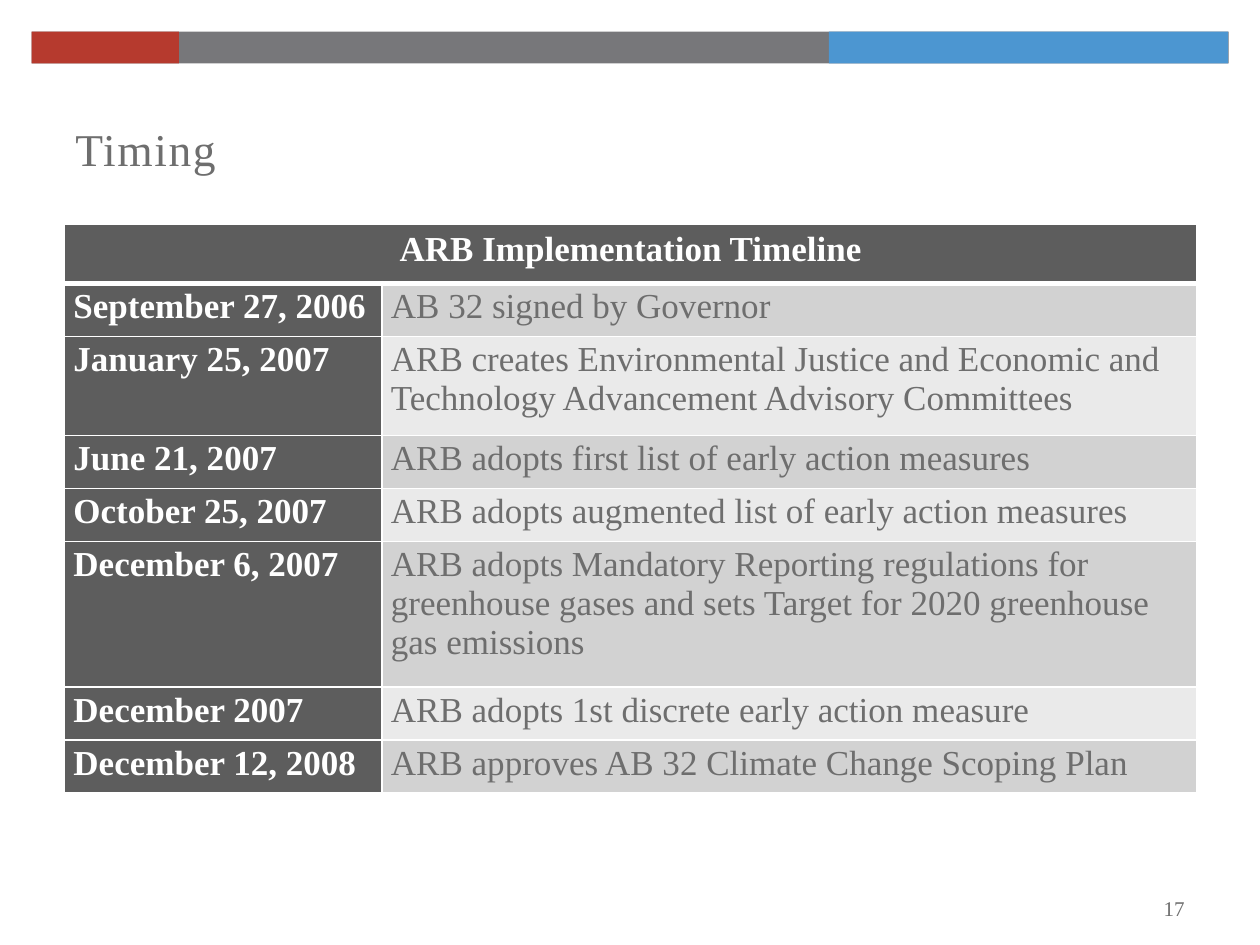
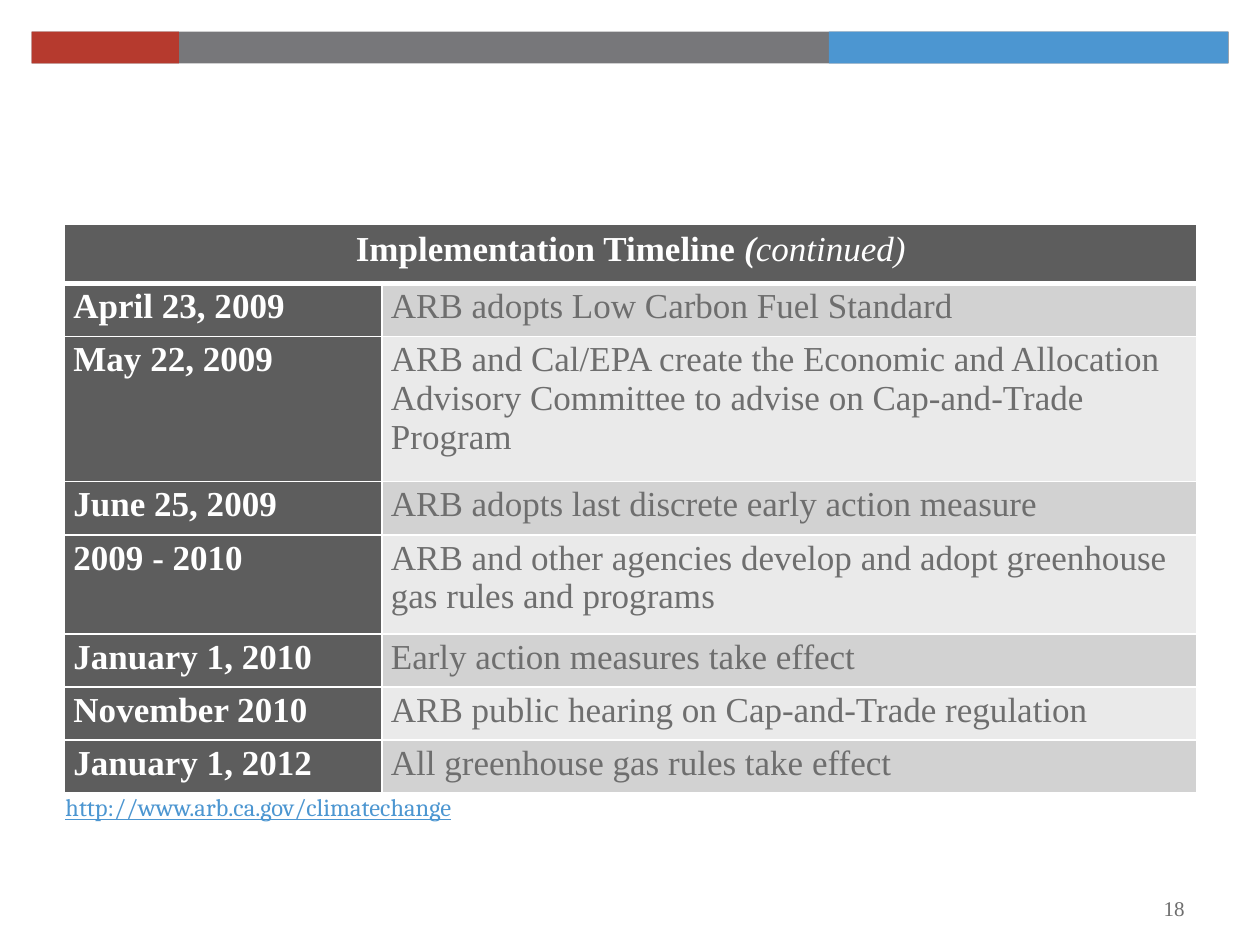
from lxml import etree
from pptx import Presentation
from pptx.dml.color import RGBColor
from pptx.enum.shapes import MSO_SHAPE
from pptx.enum.text import MSO_ANCHOR, MSO_AUTO_SIZE, PP_ALIGN
from pptx.oxml.ns import qn
from pptx.util import Cm, Pt

RECT = MSO_SHAPE.RECTANGLE
TOP = MSO_ANCHOR.TOP
NO_FIT = MSO_AUTO_SIZE.NONE
LEFT, CENTER, RIGHT = PP_ALIGN.LEFT, PP_ALIGN.CENTER, PP_ALIGN.RIGHT
TITLE_ONLY, BLANK = 5, 6

COLORS = {
    "text": "6E6E6E",
    "white": "FFFFFF",
    "gray": "77777A",
    "blue": "4C96D1",
    "red": "B63A2E",
    "head": "5D5D5D",
    "odd": "D2D2D2",
    "even": "EAEAEA",
}
SERIF = "Times New Roman"
TITLE = {"name": SERIF, "size": Pt(26), "bold": False}
NUMBER = {"name": SERIF, "size": Pt(12)}
LINK = {"name": "Cambria", "size": Pt(14), "underline": True}
BODY = {"name": SERIF, "size": Pt(20), "bold": False}
STRONG = {**BODY, "bold": True}
SLANTED = {**BODY, "italic": True}

BANDS = [("gray", 0.64, 24.13), ("blue", 16.71, 8.05), ("red", 0.64, 2.97)]
COLUMNS = [6.4, 16.43]
HEAD_HEIGHT, ROW_HEIGHT, EXTRA_LINE = 1.19, 1.07, 0.93

FIRST_HEAD = [("ARB Implementation Timeline", STRONG)]
FIRST_ROWS = [
    ("September 27, 2006", "AB 32 signed by Governor", 1),
    ("January 25, 2007", "ARB creates Environmental Justice and Economic and "
     "Technology Advancement Advisory Committees", 2),
    ("June 21, 2007", "ARB adopts first list of early action measures", 1),
    ("October 25, 2007", "ARB adopts augmented list of early action measures", 1),
    ("December 6, 2007", "ARB adopts Mandatory Reporting regulations for "
     "greenhouse gases and sets Target for 2020 greenhouse gas emissions", 3),
    ("December 2007", "ARB adopts 1st discrete early action measure", 1),
    ("December 12, 2008", "ARB approves AB 32 Climate Change Scoping Plan", 1),
]
NEXT_HEAD = [
    ("Implementation Timeline ", STRONG),
    ("(", {**SLANTED, "bold": True}),
    ("continued)", SLANTED),
]
NEXT_ROWS = [
    ("April 23, 2009", "ARB adopts Low Carbon Fuel Standard", 1),
    ("May 22, 2009", "ARB and Cal/EPA create the Economic and Allocation "
     "Advisory Committee to advise on Cap-and-Trade Program", 3),
    ("June 25, 2009", "ARB adopts last discrete early action measure", 1),
    ("2009 - 2010", "ARB and other agencies develop and adopt greenhouse "
     "gas rules and programs", 2),
    ("January 1, 2010", "Early action measures take effect", 1),
    ("November 2010", "ARB public hearing on Cap-and-Trade regulation", 1),
    ("January 1, 2012", "All greenhouse gas rules take effect", 1),
]


def rgb(color):
    """Return the named colour."""
    return RGBColor.from_string(COLORS[color])


def set_attrs(target, values):
    """Set each attribute in a dict of format values."""
    for name, value in values.items():
        setattr(target, name, value)


def add_run(p, text, fmt, color):
    """Append a formatted run to a paragraph."""
    r = p.add_run()
    r.text = text
    set_attrs(r.font, fmt)
    r.font.color.rgb = rgb(color)
    return r


def add_bands(s):
    """Draw the three-coloured strip across the top."""
    for color, left, width in BANDS:
        sp = s.shapes.add_shape(RECT, Cm(left), Cm(0.64), Cm(width), Cm(0.64))
        sp.shadow.inherit = False
        sp.fill.solid()
        sp.fill.fore_color.rgb = rgb(color)
        sp.line.fill.background()


def add_text(s, box, text, fmt, color, para):
    """Add a wrapped text box with one paragraph."""
    tf = s.shapes.add_textbox(*map(Cm, box)).text_frame
    tf.word_wrap = True
    p = tf.paragraphs[0]
    set_attrs(p, para)
    add_run(p, text, fmt, color)


def add_slide(prs, layout, number):
    """Add a slide with its bands and page number."""
    s = prs.slides.add_slide(prs.slide_layouts[layout])
    add_bands(s)
    add_text(s, (18.21, 17.93, 5.92, 0.94), str(number), NUMBER, "text",
             {"alignment": RIGHT})
    return s


def set_title(s, text):
    """Place and format the title placeholder."""
    sp = s.shapes.title
    set_attrs(sp, {"left": Cm(1.27), "top": Cm(2.54),
                   "width": Cm(22.86), "height": Cm(1.98)})
    tf = sp.text_frame
    set_attrs(tf, {"vertical_anchor": TOP, "auto_size": NO_FIT, "word_wrap": True,
                   "margin_left": Cm(0.25), "margin_right": Cm(0.25),
                   "margin_top": Cm(0.05), "margin_bottom": 0})
    p = tf.paragraphs[0]
    set_attrs(p, {"alignment": LEFT, "line_spacing": Pt(27)})
    r = add_run(p, text, TITLE, "text")
    r.font._element.set("spc", "90")


def set_borders(cell, top, bottom):
    """Give a cell white borders, with top and bottom widths in points."""
    tc_pr = cell._tc.get_or_add_tcPr()
    for side, width in (("L", 1), ("R", 1), ("T", top), ("B", bottom)):
        ln = etree.SubElement(tc_pr, qn(f"a:ln{side}"), w=str(Pt(width)))
        fill = etree.SubElement(ln, qn("a:solidFill"))
        etree.SubElement(fill, qn("a:srgbClr"), val=COLORS["white"])


def fill_cell(cell, runs, fill, color, pad, align=LEFT):
    """Write and colour one table cell."""
    set_attrs(cell, {"margin_left": Cm(0.18), "margin_right": Cm(0.18),
                     "margin_top": Cm(pad), "margin_bottom": Cm(pad - 0.03),
                     "vertical_anchor": TOP})
    cell.fill.solid()
    cell.fill.fore_color.rgb = rgb(fill)
    p = cell.text_frame.paragraphs[0]
    p.alignment = align
    for text, fmt in runs:
        add_run(p, text, fmt, color)


def add_timeline(s, head, rows):
    """Add a timeline table with a merged heading row."""
    heights = [HEAD_HEIGHT]
    heights += [ROW_HEIGHT + EXTRA_LINE * (lines - 1) for _, _, lines in rows]
    table = s.shapes.add_table(len(heights), len(COLUMNS), Cm(1.3), Cm(4.52),
                               Cm(sum(COLUMNS)), Cm(sum(heights))).table
    for column, width in zip(table.columns, COLUMNS):
        column.width = Cm(width)
    for i, (row, height) in enumerate(zip(table.rows, heights)):
        row.height = Cm(height)
        for cell in row.cells:
            set_borders(cell, 3 if i == 1 else 1, 3 if i == 0 else 1)
    table.cell(0, 0).merge(table.cell(0, 1))
    fill_cell(table.cell(0, 0), head, "head", "white", 0.13, CENTER)
    for i, (date, event, _) in enumerate(rows, 1):
        fill_cell(table.cell(i, 0), [(date, STRONG)], "head", "white", 0.08)
        fill_cell(table.cell(i, 1), [(event, BODY)],
                  "odd" if i % 2 else "even", "text", 0.08)


def main():
    """Build and save the two timeline slides."""
    prs = Presentation()
    prs.slide_width, prs.slide_height = Cm(25.4), Cm(19.05)

    s = add_slide(prs, TITLE_ONLY, 17)
    set_title(s, "Timing")
    add_timeline(s, FIRST_HEAD, FIRST_ROWS)

    s = add_slide(prs, BLANK, 18)
    add_timeline(s, NEXT_HEAD, NEXT_ROWS)
    add_text(s, (1.07, 15.88, 10.13, 0.84), "http://www.arb.ca.gov/climatechange",
             LINK, "blue", {"line_spacing": Pt(16), "space_after": Pt(11)})

    prs.save("out.pptx")


if __name__ == "__main__":
    main()
